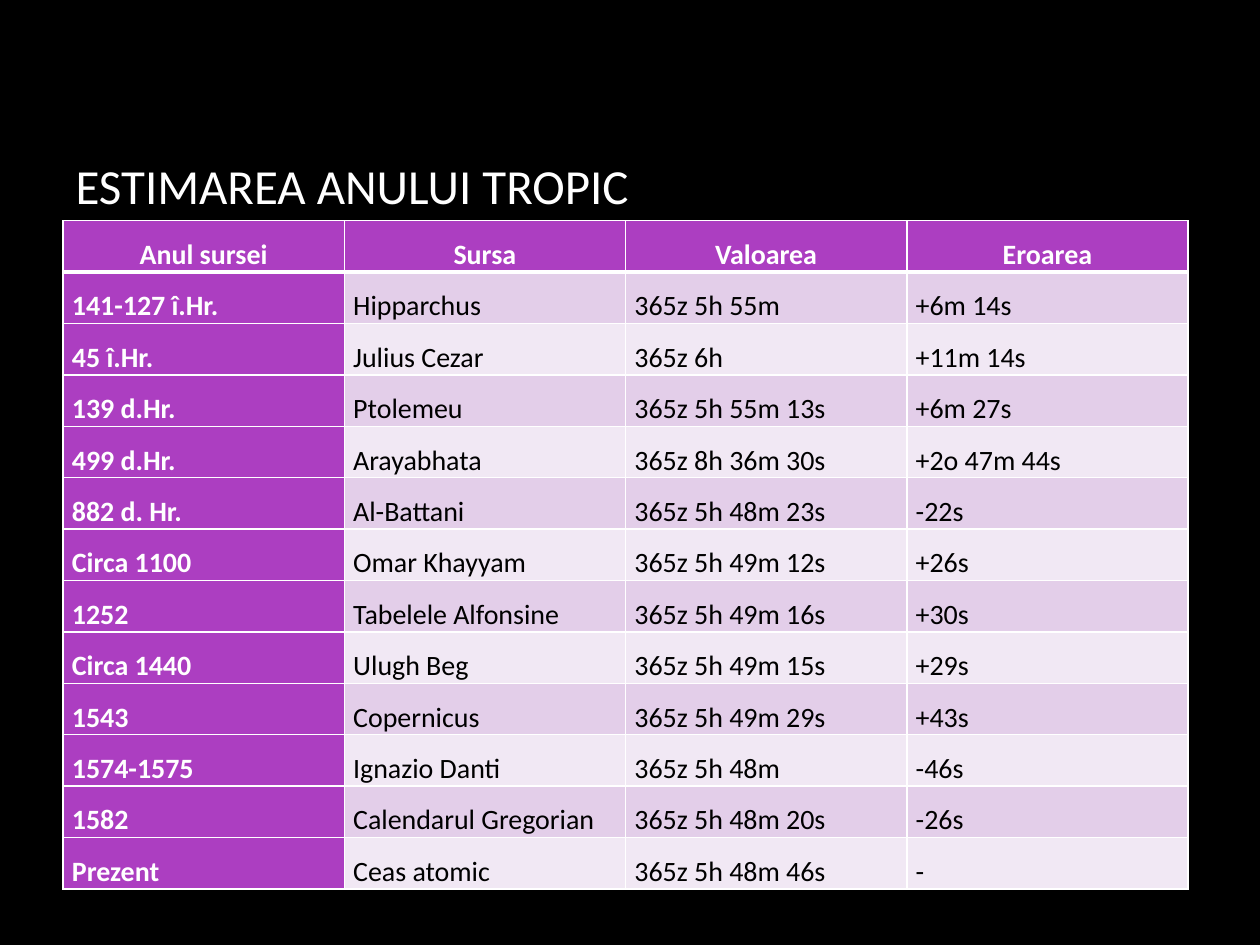
from pptx import Presentation
from pptx.dml.color import RGBColor
from pptx.enum.text import MSO_ANCHOR as Anchor, MSO_AUTO_SIZE as AutoSize, PP_ALIGN as Align
from pptx.oxml.ns import qn
from pptx.util import Cm, Pt
from lxml.etree import SubElement

WHITE, BLACK, PURPLE = "FFFFFF", "000000", "AC3EC1"
BANDS = ["E3CEE9", "F1E8F4"]
ROWS = [
    ("Anul sursei", "Sursa", "Valoarea", "Eroarea"),
    ("141-127 î.Hr.", "Hipparchus", "365z 5h 55m", "+6m 14s"),
    ("45 î.Hr.", "Julius Cezar", "365z 6h", "+11m 14s"),
    ("139 d.Hr.", "Ptolemeu", "365z 5h 55m 13s", "+6m 27s"),
    ("499 d.Hr.", "Arayabhata", "365z 8h 36m 30s", "+2o 47m 44s"),
    ("882 d. Hr.", "Al-Battani", "365z 5h 48m 23s", "-22s"),
    ("Circa 1100", "Omar Khayyam", "365z 5h 49m 12s", "+26s"),
    ("1252", "Tabelele Alfonsine", "365z 5h 49m 16s", "+30s"),
    ("Circa 1440", "Ulugh Beg", "365z 5h 49m 15s", "+29s"),
    ("1543", "Copernicus", "365z 5h 49m 29s", "+43s"),
    ("1574-1575", "Ignazio Danti", "365z 5h 48m", "-46s"),
    ("1582", "Calendarul Gregorian", "365z 5h 48m 20s", "-26s"),
    ("Prezent", "Ceas atomic", "365z 5h 48m 46s", "-"),
]


def color(value):
    return RGBColor.from_string(value)


def add_span(para, text, size, ink, bold=False):
    span = para.add_run()
    span.text = text
    span.font.name = "Calibri"
    span.font.size = Pt(size)
    span.font.bold = bold
    span.font.color.rgb = color(ink)


def set_borders(cell, widths):
    properties = cell._tc.get_or_add_tcPr()
    for side, width in widths.items():
        line = SubElement(properties, qn(f"a:ln{side}"), w=str(Pt(width)))
        fill = SubElement(line, qn("a:solidFill"))
        SubElement(fill, qn("a:srgbClr"), val=WHITE)


def format_title(page):
    title = page.shapes.title
    title.left, title.top = Cm(1.27), Cm(1.7)
    title.width, title.height = Cm(21.59), Cm(4.04)
    frame = title.text_frame
    frame.word_wrap = True
    frame.auto_size = AutoSize.NONE
    frame.vertical_anchor = Anchor.MIDDLE
    para = frame.paragraphs[0]
    para.alignment = Align.LEFT
    add_span(para, "ESTIMAREA ANULUI TROPIC", 28, WHITE)


def fill_cell(cell, text, row, column):
    header = row == 0
    strong = header or column == 0
    set_borders(cell, {"L": 1, "R": 1, "T": 3 if row == 1 else 1, "B": 3 if header else 1})
    cell.fill.solid()
    cell.fill.fore_color.rgb = color(PURPLE if strong else BANDS[(row - 1) % 2])
    cell.margin_left = cell.margin_right = Cm(0.18)
    cell.margin_top = cell.margin_bottom = 0
    para = cell.text_frame.paragraphs[0]
    para.alignment = Align.CENTER if header else Align.LEFT
    para.line_spacing = 1.5
    add_span(para, text, 16, WHITE if strong else BLACK, strong)


def add_estimates(page):
    row_height, column_width = Cm(0.93), Cm(5.67)
    column_count = len(ROWS[0])
    table = page.shapes.add_table(
        len(ROWS), column_count, Cm(1.27), Cm(4.45),
        column_width * column_count, row_height * len(ROWS),
    ).table
    table.first_col = True
    for column in table.columns:
        column.width = column_width
    for row, texts in enumerate(ROWS):
        table.rows[row].height = row_height
        for column, text in enumerate(texts):
            fill_cell(table.cell(row, column), text, row, column)


def main():
    deck = Presentation()
    deck.slide_width, deck.slide_height = Cm(25.4), Cm(19.05)
    page = deck.slides.add_slide(deck.slide_layouts[5])
    page.background.fill.solid()
    page.background.fill.fore_color.rgb = color(BLACK)
    format_title(page)
    add_estimates(page)
    deck.save("out.pptx")


if __name__ == "__main__":
    main()
